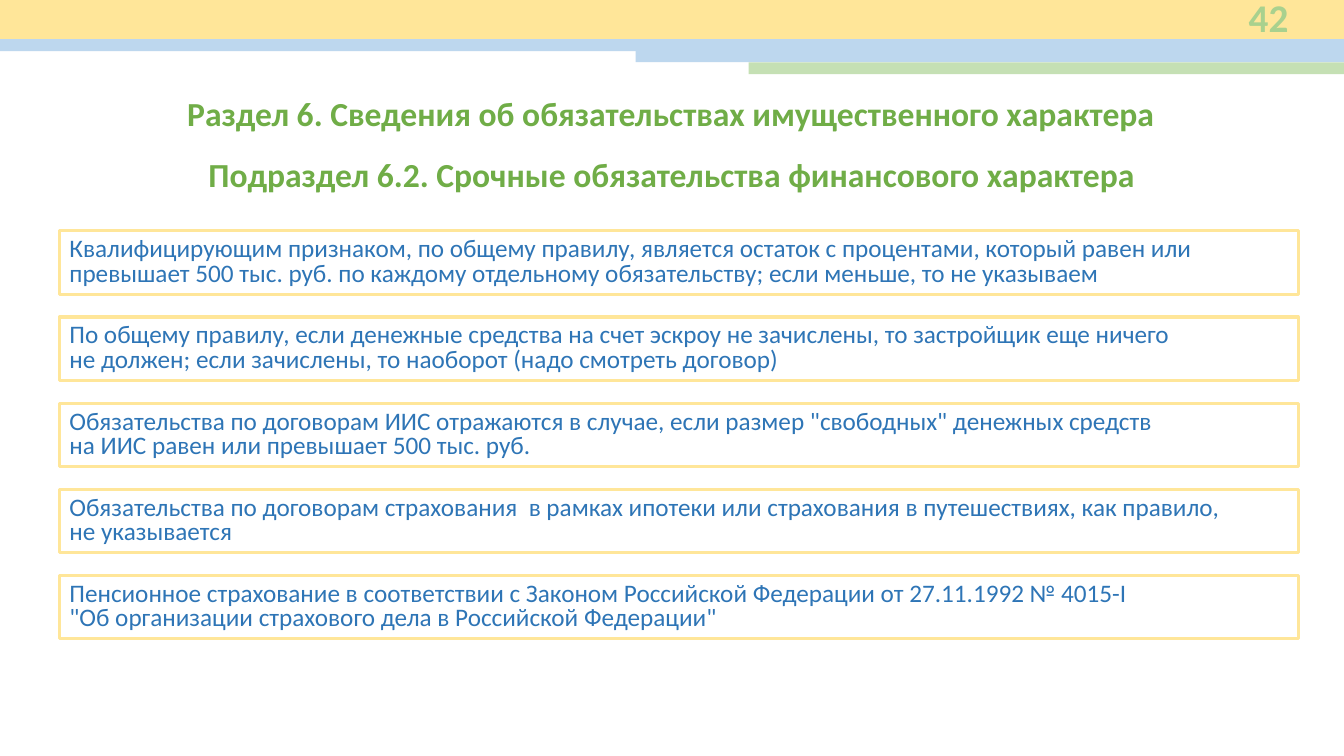
from pptx import Presentation
from pptx.dml.color import RGBColor
from pptx.enum.shapes import MSO_SHAPE
from pptx.enum.text import MSO_ANCHOR, MSO_AUTO_SIZE, PP_ALIGN
from pptx.util import Cm, Pt

COLORS = {
    "yellow": "FFE699",
    "light_blue": "BDD7EE",
    "light_green": "C5E0B4",
    "heading": "70AD47",
    "body": "2E75B6",
    "number": "A9D18E",
}


def add_rect(left, top, width, height):
    sp = s.shapes.add_shape(MSO_SHAPE.RECTANGLE, Cm(left), Cm(top), Cm(width), Cm(height))
    sp.shadow.inherit = False
    return sp


def write(sp, lines, size, color, align, anchor, bold=False):
    """Fill the first paragraph, with a line break between lines."""
    tf = sp.text_frame
    tf.word_wrap = True
    tf.auto_size = MSO_AUTO_SIZE.NONE
    tf.vertical_anchor = anchor
    p = tf.paragraphs[0]
    p.alignment = align
    for i, line in enumerate(lines):
        if i:
            p.add_line_break()
        r = p.add_run()
        r.text = line
        r.font.name = "Calibri"
        r.font.size = Pt(size)
        r.font.bold = bold
        r.font.color.rgb = RGBColor.from_string(COLORS[color])
    return p


prs = Presentation()
prs.slide_width, prs.slide_height = Cm(33.87), Cm(19.05)
s = prs.slides.add_slide(prs.slide_layouts[5])

# Header bands
bands = [
    (0, 0, 1.0, "yellow"),
    (0, 0.99, 0.3, "light_blue"),
    (16.02, 1.27, 0.3, "light_blue"),
    (18.87, 1.57, 0.3, "light_green"),
]
for left, top, height, color in bands:
    band = add_rect(left, top, 33.87 - left, height)
    band.fill.solid()
    band.fill.fore_color.rgb = RGBColor.from_string(COLORS[color])
    band.line.fill.background()

# Headings
title = s.shapes.title
title.left, title.top, title.width, title.height = Cm(1.5), Cm(2.21), Cm(30.81), Cm(1.28)
subtitle = s.shapes.add_textbox(Cm(1.52), Cm(3.76), Cm(30.81), Cm(1.28))
headings = [
    (title, "Раздел 6. Сведения об обязательствах имущественного характера"),
    (subtitle, "Подраздел 6.2. Срочные обязательства финансового характера"),
]
for sp, text in headings:
    write(sp, [text], 24, "heading", PP_ALIGN.CENTER, MSO_ANCHOR.TOP, bold=True)

# Framed rules
rules = [
    ["Квалифицирующим признаком, по общему правилу, является остаток с процентами, "
     "который равен или превышает 500 тыс. руб. по каждому отдельному обязательству; "
     "если меньше, то не указываем"],
    ["По общему правилу, если денежные средства на счет эскроу не зачислены, "
     "то застройщик еще ничего ",
     "не должен; если зачислены, то наоборот (надо смотреть договор)"],
    ["Обязательства по договорам ИИС отражаются в случае, если размер "
     "\"свободных\" денежных средств ",
     "на ИИС равен или превышает 500 тыс. руб."],
    ["Обязательства по договорам страхования  в рамках ипотеки или страхования "
     "в путешествиях, как правило, ",
     "не указывается"],
    ["Пенсионное страхование в соответствии с Законом Российской Федерации "
     "от 27.11.1992 № 4015-I ",
     "\"Об организации страхового дела в Российской Федерации\""],
]
for i, lines in enumerate(rules):
    frame = add_rect(1.5, 5.82 + i * 2.17, 31.22, 1.6)
    frame.fill.background()
    frame.line.color.rgb = RGBColor.from_string(COLORS["yellow"])
    frame.line.width = Pt(2.25)
    p = write(frame, lines, 18, "body", PP_ALIGN.LEFT, MSO_ANCHOR.MIDDLE)
    p.line_spacing = 0.8

# Slide number
number = s.shapes.add_textbox(Cm(29.54), Cm(-0.13), Cm(3.18), Cm(1.12))
write(number, ["42"], 28, "number", PP_ALIGN.RIGHT, MSO_ANCHOR.MIDDLE, bold=True)

prs.save("out.pptx")
